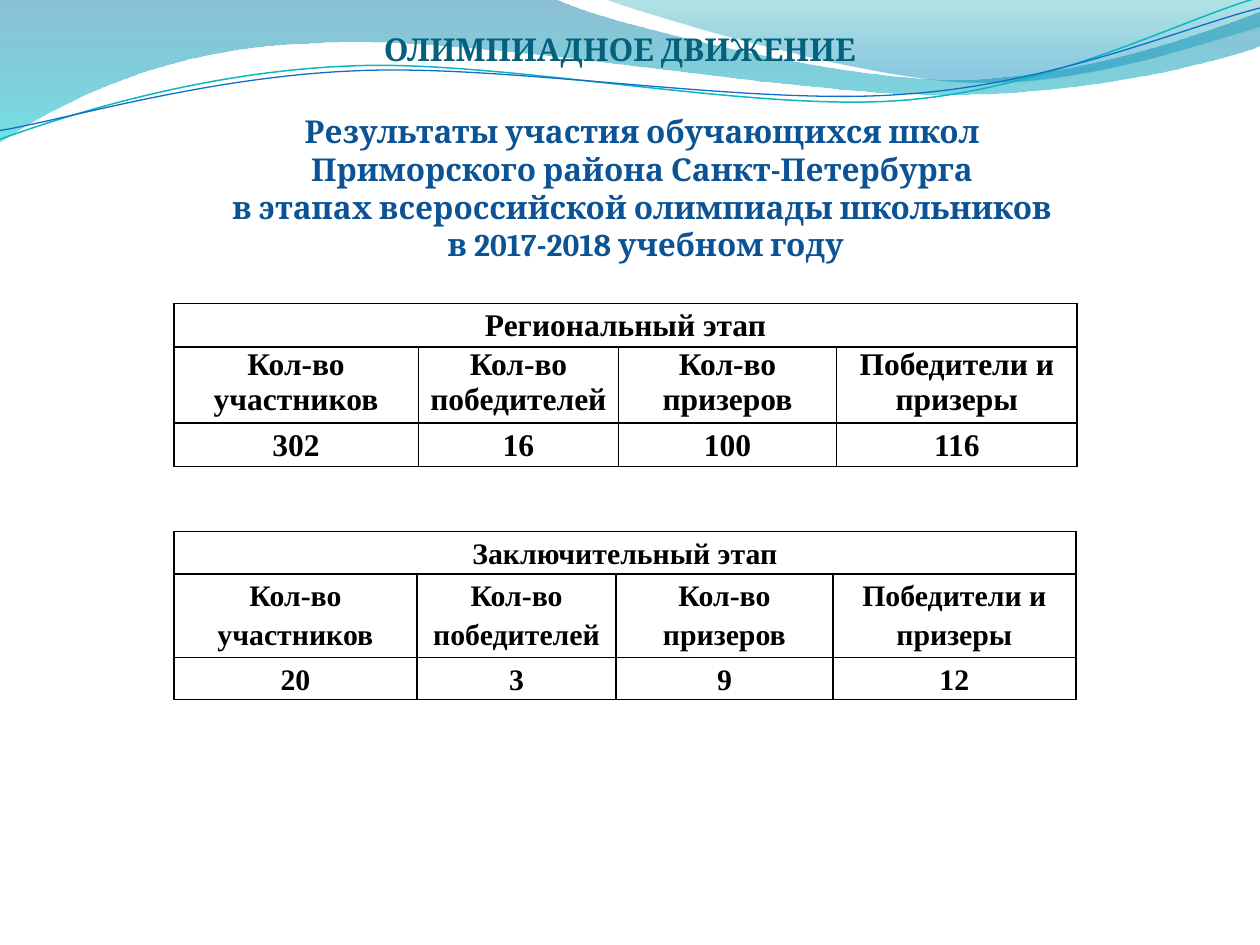
from dataclasses import dataclass
from typing import Optional

import pptx
import pptx.dml.color
import pptx.enum.text
import pptx.oxml
import pptx.oxml.ns
import pptx.util
from pptx.dml.color import RGBColor
from pptx.util import Inches, Pt

TITLE_TEAL = RGBColor(0x04, 0x61, 0x7B)
HEADING_BLUE = RGBColor(0x0B, 0x53, 0x94)
BLACK = RGBColor(0, 0, 0)
LINE_TEAL = RGBColor(0x0A, 0xB8, 0xBF)
LINE_BLUE = RGBColor(0x0F, 0x6F, 0xC6)
WAVE_BLUE = RGBColor(0x00, 0x74, 0xA1)
WAVE_CYAN = RGBColor(0x00, 0xC6, 0xCF)
CREST_TEAL = RGBColor(0x00, 0xA1, 0xA9)
CREST_BLUE = RGBColor(0x00, 0x8B, 0xBF)

LINE_TILT = -2.7
CENTER = pptx.enum.text.PP_ALIGN.CENTER
Point = tuple[float, float]


@dataclass
class Stop:
    position: float
    color: RGBColor
    opacity: int  # percent


@dataclass
class Wave:
    start: Point
    segments: list[tuple[Point, ...]]  # one point: line; three points: Bezier curve
    stops: tuple[Stop, ...] = ()
    line_color: Optional[RGBColor] = None
    line_width: float = 0


@dataclass
class Stage:
    top: float
    columns: list[float]
    rows: list[float]
    name: str
    values: list[str]
    size: int
    header_spacing: Optional[float]
    inset_top: float


WAVES = [
    Wave((0, 0), [
        ((4.4, -0.01),),
        ((4.76, 0.17), (6.64, 0.63), (7.58, 0.63)),
        ((8.53, 0.63), (9.58, 0.26), (10, 0.09)),
        ((10.01, 0.36),),
        ((9.83, 0.44), (8.7, 0.76), (7.46, 0.75)),
        ((6.22, 0.75), (3.82, 0.28), (2.57, 0.34)),
        ((1.29, 0.36), (0.46, 0.83), (-0.01, 1.13)),
        ((0, 0),),
    ], stops=(Stop(0, WAVE_BLUE, 45), Stop(1, WAVE_CYAN, 55))),
    Wave((4.79, -0.01), [
        ((5.09, 0.11), (6.82, 0.62), (7.69, 0.65)),
        ((8.56, 0.69), (9.61, 0.32), (10, 0.21)),
        ((10, 0),),
        ((4.79, -0.01),),
    ], stops=(Stop(0, CREST_TEAL, 30), Stop(0.8, CREST_BLUE, 45))),
    Wave((-0.02, 0.87), [
        ((0.47, 0.72), (1.58, 0.41), (2.78, 0.42)),
        ((3.96, 0.42), (5.91, 0.93), (7.12, 0.9)),
        ((8.32, 0.87), (9.4, 0.36), (10, 0.22)),
    ], line_color=LINE_TEAL, line_width=0.85),
    Wave((-0.02, 0.8), [
        ((0.46, 0.75), (1.64, 0.45), (2.83, 0.46)),
        ((4.03, 0.46), (5.96, 0.89), (7.16, 0.85)),
        ((8.35, 0.83), (9.42, 0.42), (10.02, 0.3)),
    ], line_color=LINE_BLUE, line_width=0.75),
]

HEADERS = ["Кол-во участников", "Кол-во победителей", "Кол-во призеров", "Победители и призеры"]
STAGES = [
    Stage(2.41, [1.94, 1.59, 1.73, 1.91], [0.34, 0.6, 0.34], "Региональный этап",
          ["302", "16", "100", "116"], 18, None, 0),
    Stage(4.22, [1.93, 1.58, 1.72, 1.93], [0.33, 0.66, 0.33], "Заключительный этап",
          ["20", "3", "9", "12"], 17, 1.15, 0.01),
]


def bend_curves(shape, segments: list[tuple[Point, ...]]) -> None:
    """Turn each run of three straight steps into one Bezier curve."""
    steps = iter(shape.element.xpath(".//a:path/a:lnTo"))
    for segment in segments:
        parts = [next(steps) for _ in segment]
        if len(parts) == 3:
            curve = pptx.oxml.parse_xml(f'<a:cubicBezTo {pptx.oxml.ns.nsdecls("a")}/>')
            parts[0].addprevious(curve)
            for part in parts:
                curve.append(part[0])
                part.getparent().remove(part)


def draw_wave(slide, wave: Wave) -> None:
    points = [point for segment in wave.segments for point in segment]
    builder = slide.shapes.build_freeform(Inches(wave.start[0]), Inches(wave.start[1]))
    builder.add_line_segments([(Inches(x), Inches(y)) for x, y in points],
                              close=bool(wave.stops))
    shape = builder.convert_to_shape()
    bend_curves(shape, wave.segments)
    shape.shadow.inherit = False
    if not wave.stops:
        shape.rotation = LINE_TILT
        shape.fill.background()
        shape.line.color.rgb = wave.line_color
        shape.line.width = Pt(wave.line_width)
        return
    shape.line.fill.background()
    shape.fill.gradient()
    shape.fill.gradient_angle = 270
    for gradient_stop, stop in zip(shape.fill.gradient_stops, wave.stops):
        gradient_stop.position = stop.position
        gradient_stop.color.rgb = stop.color
    for color, stop in zip(shape.element.xpath(".//a:gs/a:srgbClr"), wave.stops):
        color.append(pptx.oxml.parse_xml(
            f'<a:alpha {pptx.oxml.ns.nsdecls("a")} val="{stop.opacity * 1000}"/>'))


def format_text(frame, font: str, size: int, color: RGBColor,
                spacing: Optional[float] = None) -> None:
    frame.word_wrap = True
    for paragraph in frame.paragraphs:
        paragraph.alignment = CENTER
        paragraph.line_spacing = spacing
        for run in paragraph.runs:
            run.font.name = font
            run.font.size = Pt(size)
            run.font.bold = True
            run.font.color.rgb = color


def add_borders(cell) -> None:
    properties = cell._tc.get_or_add_tcPr()
    for index, side in enumerate(("lnL", "lnR", "lnT", "lnB")):
        properties.insert(index, pptx.oxml.parse_xml(
            f'<a:{side} {pptx.oxml.ns.nsdecls("a")} w="{Pt(1)}">'
            f'<a:solidFill><a:srgbClr val="{BLACK}"/></a:solidFill></a:{side}>'))


def draw_stage(slide, stage: Stage) -> None:
    table = slide.shapes.add_table(
        len(stage.rows), len(stage.columns), Inches(1.38), Inches(stage.top),
        Inches(sum(stage.columns)), Inches(sum(stage.rows))).table
    for column, width in zip(table.columns, stage.columns):
        column.width = Inches(width)
    for row, height in zip(table.rows, stage.rows):
        row.height = Inches(height)
    table.cell(0, 0).merge(table.cell(0, len(stage.columns) - 1))

    contents = [[stage.name, "", "", ""], HEADERS, stage.values]
    for row_index, texts in enumerate(contents):
        spacing = stage.header_spacing if row_index == 1 else 1.15
        for column_index, text in enumerate(texts):
            cell = table.cell(row_index, column_index)
            cell.fill.background()
            add_borders(cell)
            cell.margin_left = cell.margin_right = Inches(0.07)
            cell.margin_top, cell.margin_bottom = Inches(stage.inset_top), 0
            cell.text_frame.text = text
            format_text(cell.text_frame, "Times New Roman", stage.size, BLACK, spacing)


def main() -> None:
    presentation = pptx.Presentation()
    presentation.slide_width, presentation.slide_height = Inches(10), Inches(7.5)
    slide = presentation.slides.add_slide(presentation.slide_layouts[6])

    # Wavy band along the top
    for wave in WAVES:
        draw_wave(slide, wave)

    # Title
    title = slide.shapes.add_textbox(
        Inches(2.32), 0, Inches(5.2), Inches(0.54)).text_frame
    title.margin_left = title.margin_right = title.margin_bottom = 0
    title.vertical_anchor = pptx.enum.text.MSO_ANCHOR.BOTTOM
    title.text = "ОЛИМПИАДНОЕ ДВИЖЕНИЕ"
    format_text(title, "Cambria", 18, TITLE_TEAL)

    # Heading
    heading = slide.shapes.add_textbox(
        Inches(1.54), Inches(0.84), Inches(7.17), Inches(1.31)).text_frame
    heading.auto_size = pptx.enum.text.MSO_AUTO_SIZE.SHAPE_TO_FIT_TEXT
    heading.text = ("Результаты участия обучающихся школ \n"
                    "Приморского района Санкт-Петербурга \n"
                    "в этапах всероссийской олимпиады школьников \n"
                    "в 2017-2018 учебном году")
    format_text(heading, "Cambria", 18, HEADING_BLUE)

    # Results of each stage
    for stage in STAGES:
        draw_stage(slide, stage)

    presentation.save("out.pptx")


if __name__ == "__main__":
    main()
